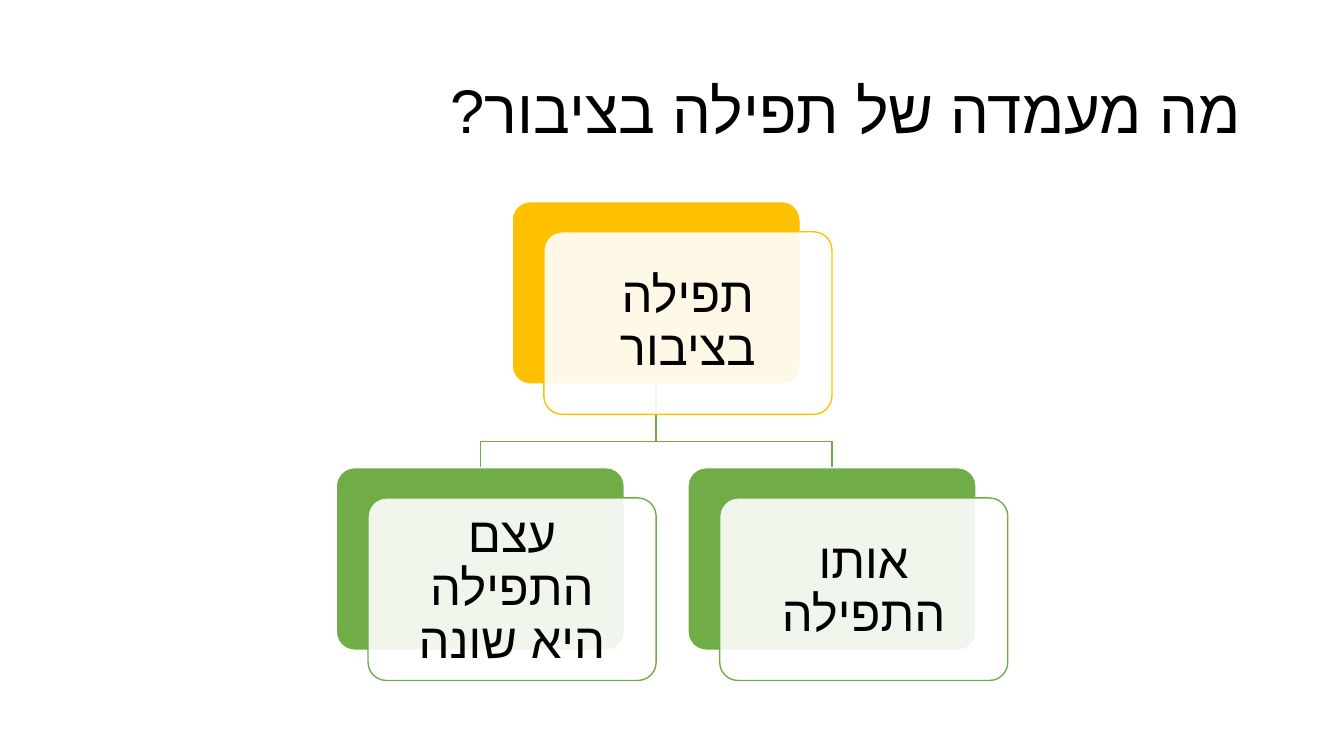
from dataclasses import dataclass
from lxml.etree import SubElement
from pptx import Presentation
from pptx.dml.color import RGBColor
from pptx.enum.shapes import MSO_SHAPE
from pptx.enum.text import MSO_ANCHOR, PP_ALIGN
from pptx.oxml.ns import qn
from pptx.shapes.autoshape import Shape
from pptx.shapes.shapetree import SlideShapes
from pptx.util import Pt


@dataclass(frozen=True)
class Theme:
    font: str = "Calibri"
    script: str = "Arial"
    ink: str = "000000"
    white: str = "FFFFFF"
    gold: str = "FFC000"
    green: str = "70AD47"
    title: float = 44
    body: float = 35
    line: float = 1


@dataclass(frozen=True)
class Node:
    text: str
    left: float
    top: float
    color: str


THEME = Theme()
WIDE, HIGH = 205.8, 130.4
SHIFT_X, SHIFT_Y = 22.7, 21.6
STEP, DROP, BEND = 125.6, 190.1, 40.8
ROOT = Node("תפילה בציבור", 365.8, 144, THEME.gold)
KIDS = [
    Node(text, ROOT.left + side * STEP, ROOT.top + DROP, THEME.green)
    for text, side in (("אותו התפילה", 1), ("עצם התפילה היא שונה", -1))
]


def write(shape: Shape, text: str, *, size: float, align: PP_ALIGN,
          inset: tuple[float, float], after: float = 0) -> None:
    """Put right-to-left text into a shape."""
    frame = shape.text_frame
    frame.word_wrap = True
    frame.vertical_anchor = MSO_ANCHOR.MIDDLE
    frame.margin_left = frame.margin_right = Pt(inset[0])
    frame.margin_top = frame.margin_bottom = Pt(inset[1])
    para = frame.paragraphs[0]
    para.alignment = align
    para.line_spacing = 0.9
    para.space_after = Pt(after)
    run = para.add_run()
    run.text = text
    run.font.size = Pt(size)
    run.font.name = THEME.font
    run.font.color.rgb = RGBColor.from_string(THEME.ink)
    for props in shape.element.iter(qn("a:pPr")):
        props.set("rtl", "1")
    for props in shape.element.iter(qn("a:rPr")):
        props.set("lang", "he-IL")
        SubElement(props, qn("a:cs")).set("typeface", THEME.script)


def stroke(shape: Shape, color: str) -> None:
    """Set the outline and drop the shadow."""
    shape.shadow.inherit = False
    shape.line.color.rgb = RGBColor.from_string(color)
    shape.line.width = Pt(THEME.line)


def card(shapes: SlideShapes, left: float, top: float, fill: str, edge: str) -> Shape:
    """Draw one rounded card."""
    shape = shapes.add_shape(
        MSO_SHAPE.ROUNDED_RECTANGLE, Pt(left), Pt(top), Pt(WIDE), Pt(HIGH))
    shape.adjustments[0] = 0.1
    shape.fill.solid()
    shape.fill.fore_color.rgb = RGBColor.from_string(fill)
    stroke(shape, edge)
    return shape


def draw(shapes: SlideShapes, node: Node) -> None:
    """Draw a node as a solid card under a sheer one with text."""
    card(shapes, node.left, node.top, node.color, THEME.white)
    front = card(shapes, node.left + SHIFT_X, node.top + SHIFT_Y,
                 THEME.white, node.color)
    tint = front.element.spPr.find(qn("a:solidFill"))[0]
    SubElement(tint, qn("a:alpha")).set("val", "90000")
    write(front, node.text, size=THEME.body, align=PP_ALIGN.CENTER,
          inset=(10.5, 10.5), after=12.25)


def link(shapes: SlideShapes, root: Node, kid: Node) -> None:
    """Join a root to a kid with a bent line."""
    start, end = root.left + WIDE / 2, kid.left + WIDE / 2
    base = root.top + HIGH
    pen = shapes.build_freeform(Pt(start), Pt(base))
    pen.add_line_segments(
        [(Pt(start), Pt(base + BEND)), (Pt(end), Pt(base + BEND)),
         (Pt(end), Pt(kid.top))], close=False)
    shape = pen.convert_to_shape()
    shape.fill.background()
    stroke(shape, kid.color)


def main() -> None:
    """Build the slide and save it."""
    deck = Presentation()
    deck.slide_width, deck.slide_height = Pt(960), Pt(540)
    shapes = deck.slides.add_slide(deck.slide_layouts[6]).shapes
    title = shapes.add_textbox(Pt(66), Pt(28.8), Pt(828), Pt(104.4))
    write(title, "מה מעמדה של תפילה בציבור?", size=THEME.title,
          align=PP_ALIGN.RIGHT, inset=(7.2, 3.6))
    for kid in reversed(KIDS):
        link(shapes, ROOT, kid)
    for node in (ROOT, *KIDS):
        draw(shapes, node)
    deck.save("out.pptx")


if __name__ == "__main__":
    main()
